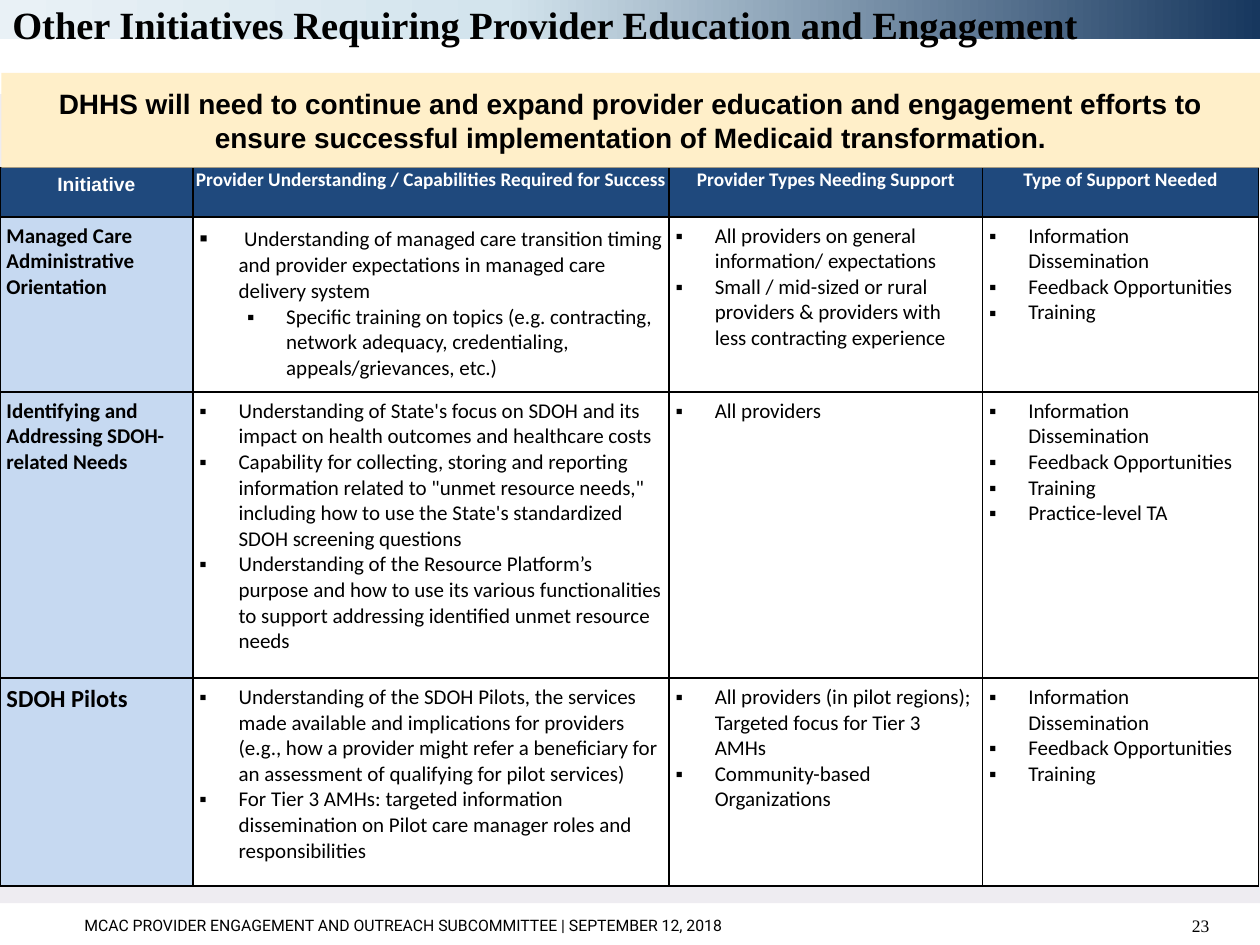
from copy import deepcopy

from lxml.etree import SubElement
from pptx import Presentation
from pptx.dml.color import RGBColor
from pptx.enum.shapes import MSO_SHAPE as Shape
from pptx.enum.text import MSO_ANCHOR as Anchor, PP_ALIGN as Align
from pptx.oxml.ns import qn
from pptx.util import Cm, Pt

BLACK = RGBColor(0x00, 0x00, 0x00)
WHITE = RGBColor(0xFF, 0xFF, 0xFF)
NAVY = RGBColor(0x1F, 0x49, 0x7D)
LIGHT_BLUE = RGBColor(0xC6, 0xD9, 0xF1)
CREAM = RGBColor(0xFF, 0xEF, 0xC9)
PURPLE = RGBColor(0x60, 0x4A, 0x7B)
BAND_STOPS = [
    (0, RGBColor(0x17, 0x37, 0x5E)),
    (0.6, RGBColor(0xD3, 0xE4, 0xED)),
    (1, RGBColor(0xE9, 0xF1, 0xF6)),
]

COLUMN_WIDTHS = [3.89, 9.6, 6.32, 5.56]
ROW_HEIGHTS = [0.99, 3.53, 5.77, 4.19]
CELL_INSET = 0.13
BULLET_INDENT = 0.79
SUB_BULLET_MARGIN = 1.75

HEADERS = [
    "Initiative",
    "Provider Understanding / Capabilities Required for Success",
    "Provider Types Needing Support",
    "Type of Support Needed",
]
BASIC_SUPPORT = ["Information Dissemination", "Feedback Opportunities", "Training"]

# Initiative, its text size, then the bullets of each column; a tuple is a sub-bullet
INITIATIVES = [
    ("Managed Care Administrative Orientation", 12, [
        [" Understanding of managed care transition timing and provider "
         "expectations in managed care delivery system",
         ("Specific training on topics (e.g. contracting, network adequacy, "
          "credentialing, appeals/grievances, etc.)",)],
        ["All providers on general information/ expectations",
         "Small / mid-sized or rural providers & providers with less "
         "contracting experience"],
        BASIC_SUPPORT,
    ]),
    ("Identifying and Addressing SDOH-related Needs", 12, [
        ["Understanding of State's focus on SDOH and its impact on health "
         "outcomes and healthcare costs",
         "Capability for collecting, storing and reporting information related "
         "to \"unmet resource needs,\" including how to use the State's "
         "standardized SDOH screening questions",
         "Understanding of the Resource Platform’s purpose and how to use its "
         "various functionalities to support addressing identified unmet "
         "resource needs"],
        ["All providers"],
        BASIC_SUPPORT + ["Practice-level TA"],
    ]),
    ("SDOH Pilots", 14, [
        ["Understanding of the SDOH Pilots, the services made available and "
         "implications for providers (e.g., how a provider might refer a "
         "beneficiary for an assessment of qualifying for pilot services)",
         "For Tier 3 AMHs: targeted information dissemination on Pilot care "
         "manager roles and responsibilities"],
        ["All providers (in pilot regions); Targeted focus for Tier 3 AMHs",
         "Community-based Organizations"],
        BASIC_SUPPORT,
    ]),
]


def style_paragraph(paragraph, font_name, size, bold=False, color=BLACK, align=Align.LEFT):
    paragraph.alignment = align
    font = paragraph.font
    font.name, font.size, font.bold = font_name, Pt(size), bold
    font.color.rgb = color


def add_text(slide, box, text, font_name, size, anchor=Anchor.MIDDLE, **style):
    frame = slide.shapes.add_textbox(*map(Cm, box)).text_frame
    frame.word_wrap = True
    frame.vertical_anchor = anchor
    frame.text = text
    style_paragraph(frame.paragraphs[0], font_name, size, **style)
    return frame


def add_rectangle(slide, box, color=None):
    shape = slide.shapes.add_shape(Shape.RECTANGLE, *map(Cm, box))
    shape.shadow.inherit = False
    shape.line.fill.background()
    if color is not None:
        shape.fill.solid()
        shape.fill.fore_color.rgb = color
    return shape


def add_gradient_band(slide, box):
    shape = add_rectangle(slide, box)
    shape.fill.gradient()
    shape.fill.gradient_angle = 180
    stop_list = shape._element.spPr.find(".//" + qn("a:gsLst"))
    stop_list.append(deepcopy(stop_list[0]))
    for stop, (position, color) in zip(shape.fill.gradient_stops, BAND_STOPS):
        stop.position = position
        stop.color.rgb = color


def set_opacity(shape, percent):
    color = shape._element.spPr.find(".//" + qn("a:srgbClr"))
    SubElement(color, qn("a:alpha"), val=str(percent * 1000))


def format_cell(cell, color, inset):
    # Borders come before the fill in the cell properties
    properties = cell._tc.get_or_add_tcPr()
    for side in ("lnL", "lnR", "lnT", "lnB"):
        line = SubElement(properties, qn(f"a:{side}"), w=str(Pt(1)))
        fill = SubElement(line, qn("a:solidFill"))
        SubElement(fill, qn("a:srgbClr"), val=str(BLACK))
    cell.fill.solid()
    cell.fill.fore_color.rgb = color
    cell.margin_left = cell.margin_right = Cm(inset)
    cell.margin_top = cell.margin_bottom = Cm(inset)


def add_bullet(paragraph, item):
    is_sub = isinstance(item, tuple)
    text = item[0] if is_sub else item
    paragraph.level = int(is_sub)
    properties = paragraph._p.get_or_add_pPr()
    properties.set("marL", str(Cm(SUB_BULLET_MARGIN if is_sub else BULLET_INDENT)))
    properties.set("indent", str(-Cm(BULLET_INDENT)))
    SubElement(properties, qn("a:buFont"), typeface="Arial")
    SubElement(properties, qn("a:buChar"), char="▪")
    style_paragraph(paragraph, "Calibri", 12)
    if text.startswith(" "):
        lead = paragraph.add_run()
        lead.text = " "
        lead.font.size = Pt(14)
    paragraph.add_run().text = text.lstrip()


def fill_bullets(cell, items):
    frame = cell.text_frame
    for index, item in enumerate(items):
        add_bullet(frame.add_paragraph() if index else frame.paragraphs[0], item)


def add_initiative_table(slide):
    table = slide.shapes.add_table(
        len(ROW_HEIGHTS), len(COLUMN_WIDTHS), Cm(0), Cm(3.38),
        Cm(sum(COLUMN_WIDTHS)), Cm(sum(ROW_HEIGHTS))).table
    for column, width in zip(table.columns, COLUMN_WIDTHS):
        column.width = Cm(width)
    for row, height in zip(table.rows, ROW_HEIGHTS):
        row.height = Cm(height)

    # Header row
    for index, header in enumerate(HEADERS):
        cell = table.cell(0, index)
        format_cell(cell, NAVY, 0 if index else CELL_INSET)
        cell.text = header
        style_paragraph(cell.text_frame.paragraphs[0], "Calibri" if index else "Arial",
                        11, True, WHITE, Align.CENTER)

    # One row for each initiative
    for row, (name, size, columns) in enumerate(INITIATIVES, start=1):
        cell = table.cell(row, 0)
        format_cell(cell, LIGHT_BLUE, CELL_INSET)
        cell.text = name
        style_paragraph(cell.text_frame.paragraphs[0], "Calibri", size, True)
        for column, items in enumerate(columns, start=1):
            cell = table.cell(row, column)
            format_cell(cell, WHITE, CELL_INSET)
            fill_bullets(cell, items)


def add_key_message(slide, text):
    banner = add_rectangle(slide, (0.03, 1.47, 25.37, 1.91), CREAM)
    frame = banner.text_frame
    frame.word_wrap = True
    frame.vertical_anchor = Anchor.MIDDLE
    frame.text = text
    style_paragraph(frame.paragraphs[0], "Arial", 16, True, align=Align.CENTER)


def main():
    presentation = Presentation()
    presentation.slide_width, presentation.slide_height = Cm(25.4), Cm(19.05)
    slide = presentation.slides.add_slide(presentation.slide_layouts[6])

    # Title band
    add_gradient_band(slide, (0, 0, 25.4, 0.79))
    title = add_text(slide, (0, 0, 25.4, 1.52),
                     "Other Initiatives Requiring Provider Education and Engagement",
                     "Times New Roman", 22, Anchor.TOP, bold=True)
    title.paragraphs[0].line_spacing = 0.9

    # Body
    set_opacity(add_rectangle(slide, (0, 1.9, 25.4, 16.31), PURPLE), 10)
    add_initiative_table(slide)
    add_key_message(slide, "DHHS will need to continue and expand provider education and "
                           "engagement efforts to ensure successful implementation of "
                           "Medicaid transformation.")

    # Footer
    add_text(slide, (1.45, 18.26, 21.34, 0.79),
             "MCAC PROVIDER ENGAGEMENT AND OUTREACH SUBCOMMITTEE | SEPTEMBER 12, 2018",
             "Roboto", 9)
    add_text(slide, (23.06, 18.26, 1.57, 0.79), "23", "Times New Roman", 10,
             align=Align.RIGHT)

    presentation.save("out.pptx")


if __name__ == "__main__":
    main()
